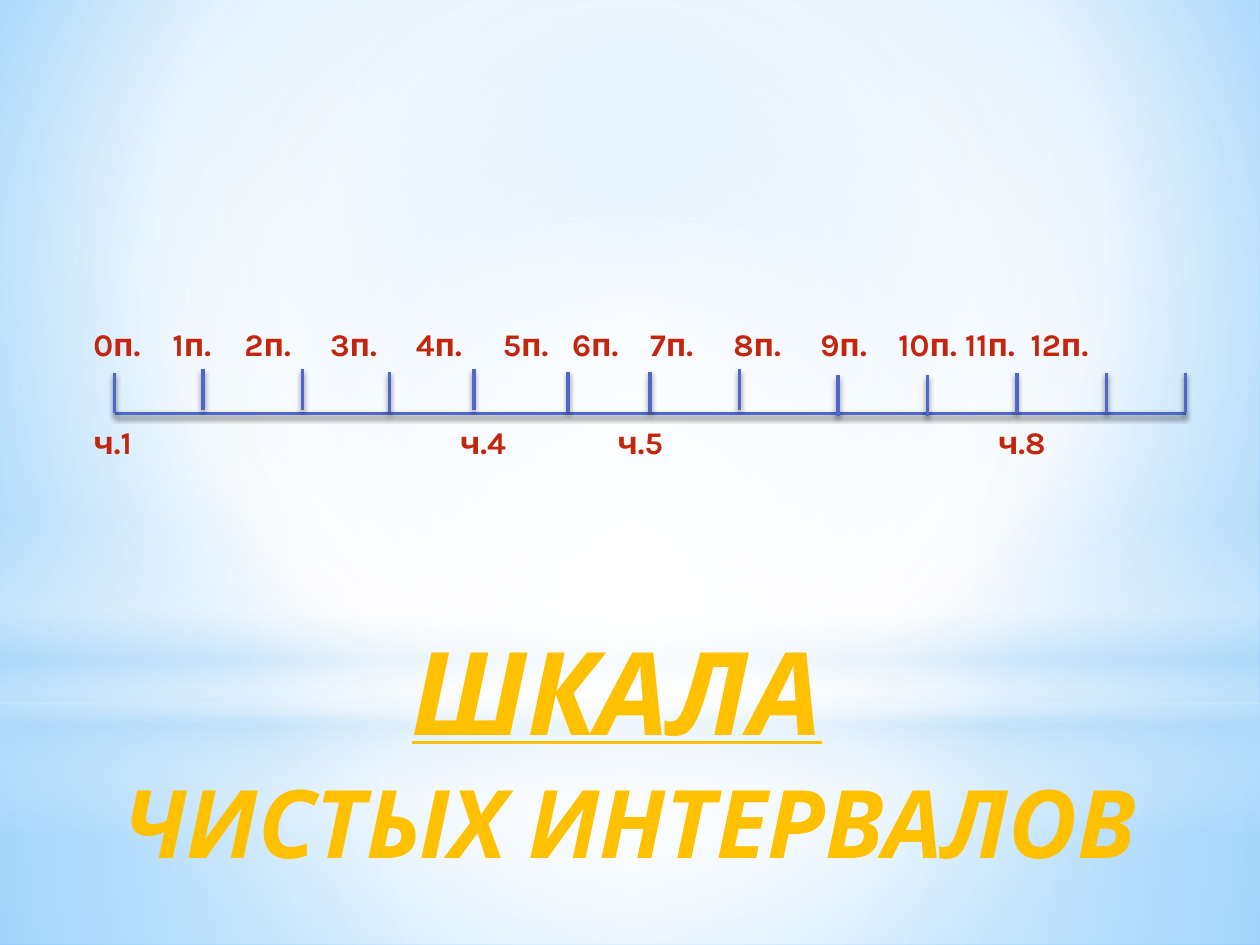
from lxml.etree import SubElement
from pptx import Presentation
from pptx.dml.color import RGBColor
from pptx.enum.shapes import MSO_CONNECTOR, MSO_SHAPE
from pptx.enum.text import MSO_ANCHOR, MSO_AUTO_SIZE, PP_ALIGN
from pptx.oxml.ns import qn
from pptx.util import Inches, Pt

FONT = "Karla"
GOLD, RED, BLUE = "FFC000", "C3260C", "4E67C8"
WHITE, SKY = "FFFFFF", "B4DCFA"
CENTER = (50, 50, 50, 50)
BACKGROUND = [(0, "9ED5FF", 100), (60, WHITE, 100), (100, "5BB9FF", 100)]
LAYERS = [
    (MSO_SHAPE.RECTANGLE, (0, 5.58, 10, 1.92),
     [(0, WHITE, 91), (37, WHITE, 76), (100, SKY, 79)], CENTER),
    (MSO_SHAPE.RECTANGLE, (0, 0, 10, 5.58),
     [(0, WHITE, 89), (48, WHITE, 62), (100, SKY, 79)], CENTER),
    (MSO_SHAPE.RECTANGLE, (0, 4.12, 10, 2.5),
     [(0, WHITE, 0), (29, WHITE, 30), (45, SKY, 40),
      (55, WHITE, 26), (65, SKY, 60), (100, WHITE, 0)], None),
    (MSO_SHAPE.OVAL, (0, 1.75, 10, 5.58),
     [(0, WHITE, 100), (56, WHITE, 0)], CENTER),
]
TITLE = [
    [("ШКАЛА", 66, True), (" ", 66, False)],
    [("ЧИСТЫХ ИНТЕРВАЛОВ", 54, False)],
]
AXIS_LEFT, AXIS_RIGHT, AXIS_Y, TICK_HEIGHT = 0.91, 9.41, 3.28, 0.32
TICKS = [(0.91, 3.28), (1.61, 3.25), (2.4, 3.25), (3.09, 3.27), (3.76, 3.25),
         (4.51, 3.27), (5.16, 3.27), (5.87, 3.25), (6.65, 3.3), (7.36, 3.3),
         (8.07, 3.28), (8.78, 3.28), (9.41, 3.28)]
SEMITONE_LEFTS = [0.74, 1.37, 1.94, 2.62, 3.3, 3.99, 4.54,
                  5.16, 5.82, 6.51, 7.13, 7.66, 8.18]
SEMITONES = [(f"{number}п.", left) for number, left in enumerate(SEMITONE_LEFTS)]
INTERVALS = [("ч.1", 0.74), ("ч.4", 3.65), ("ч.5", 4.9), ("ч.8", 7.92)]
LABEL_ROWS = [(2.53, SEMITONES), (3.31, INTERVALS)]
LABEL_LEFT, LABEL_INSET = 0.59, 0.15


def color(value):
    """Turn a hex string into a colour."""
    return RGBColor.from_string(value)


def add_color(parent, value, opacity):
    """Add an XML colour with an opacity in percent."""
    element = SubElement(parent, qn("a:srgbClr"), val=value)
    SubElement(element, qn("a:alpha"), val=str(opacity * 1000))


def set_gradient(fill, owner, stops, focus):
    """Fill with a round gradient, or a vertical one without a focus."""
    fill.gradient()
    gradient = owner.find(".//" + qn("a:gradFill"))
    for child in list(gradient):
        gradient.remove(child)
    stop_list = SubElement(gradient, qn("a:gsLst"))
    for position, value, opacity in stops:
        stop = SubElement(stop_list, qn("a:gs"), pos=str(position * 1000))
        add_color(stop, value, opacity)
    if focus:
        circle = SubElement(gradient, qn("a:path"), {"path": "circle"})
        sides = {side: str(part * 1000) for side, part in zip("ltrb", focus)}
        SubElement(circle, qn("a:fillToRect"), sides)
    else:
        SubElement(gradient, qn("a:lin"), ang="5400000", scaled="0")


def add_line(slide, start, end):
    """Draw a blue line with a soft shadow below it."""
    line = slide.shapes.add_connector(
        MSO_CONNECTOR.STRAIGHT, *(Inches(value) for value in start + end))
    line.line.color.rgb = color(BLUE)
    line.line.width = Pt(2)
    effects = SubElement(line.element.spPr, qn("a:effectLst"))
    shadow = SubElement(effects, qn("a:outerShdw"), blurRad=str(Pt(3.1)),
                        dist=str(Pt(1.8)), dir="5400000", rotWithShape="0")
    add_color(shadow, "000000", 45)


def add_run(paragraph, text, size, value):
    """Add a bold run and return its font."""
    run = paragraph.add_run()
    run.text = text
    run.font.name = FONT
    run.font.size = Pt(size)
    run.font.bold = True
    run.font.color.rgb = color(value)
    return run.font


def add_layers(slide):
    """Paint the background and the soft light over it."""
    set_gradient(slide.background.fill, slide.element, BACKGROUND, (20, 10, 20, 60))
    for kind, box, stops, focus in LAYERS:
        shape = slide.shapes.add_shape(kind, *(Inches(value) for value in box))
        shape.shadow.inherit = False
        shape.line.fill.background()
        set_gradient(shape.fill, shape.element.spPr, stops, focus)


def fill_title(body):
    """Place the two heading lines in the body placeholder."""
    body.left, body.top, body.width, body.height = (
        Inches(value) for value in (0, 4.79, 10, 2.71))
    frame = body.text_frame
    frame.word_wrap = True
    frame.auto_size = MSO_AUTO_SIZE.NONE
    frame.vertical_anchor = MSO_ANCHOR.TOP
    frame.margin_top = Inches(0.13)
    for index, runs in enumerate(TITLE):
        paragraph = frame.add_paragraph() if index else frame.paragraphs[0]
        paragraph.alignment = PP_ALIGN.CENTER
        paragraph.space_before, paragraph.space_after = Pt(0), Pt(3)
        properties = paragraph._p.get_or_add_pPr()
        properties.set("marL", "0")
        properties.set("indent", "0")
        SubElement(properties, qn("a:buNone"))
        for text, size, underlined in runs:
            font = add_run(paragraph, text, size, GOLD)
            font.italic = True
            font.underline = underlined


def add_labels(slide, top, labels):
    """Add a row of labels set on tab stops."""
    box = slide.shapes.add_textbox(
        Inches(LABEL_LEFT), Inches(top), Inches(9.41), Inches(0.4))
    frame = box.text_frame
    frame.word_wrap = True
    frame.margin_left = Inches(LABEL_INSET)
    frame.auto_size = MSO_AUTO_SIZE.SHAPE_TO_FIT_TEXT
    paragraph = frame.paragraphs[0]
    tabs = SubElement(paragraph._p.get_or_add_pPr(), qn("a:tabLst"))
    for text, left in labels[1:]:
        position = Inches(left - LABEL_LEFT - LABEL_INSET)
        SubElement(tabs, qn("a:tab"), pos=str(position), algn="l")
    add_run(paragraph, "\t".join(text for text, left in labels), 18, RED)


def main():
    """Build the scale of perfect intervals."""
    presentation = Presentation()
    presentation.slide_width, presentation.slide_height = Inches(10), Inches(7.5)
    slide = presentation.slides.add_slide(presentation.slide_layouts[1])
    title, body = slide.placeholders
    tree = body.element.getparent()
    tree.remove(title.element)
    add_layers(slide)
    tree.append(body.element)
    fill_title(body)
    add_line(slide, (AXIS_LEFT, AXIS_Y), (AXIS_RIGHT, AXIS_Y))
    for left, bottom in TICKS:
        add_line(slide, (left, bottom), (left, bottom - TICK_HEIGHT))
    for top, labels in LABEL_ROWS:
        add_labels(slide, top, labels)
    presentation.save("out.pptx")


if __name__ == "__main__":
    main()
